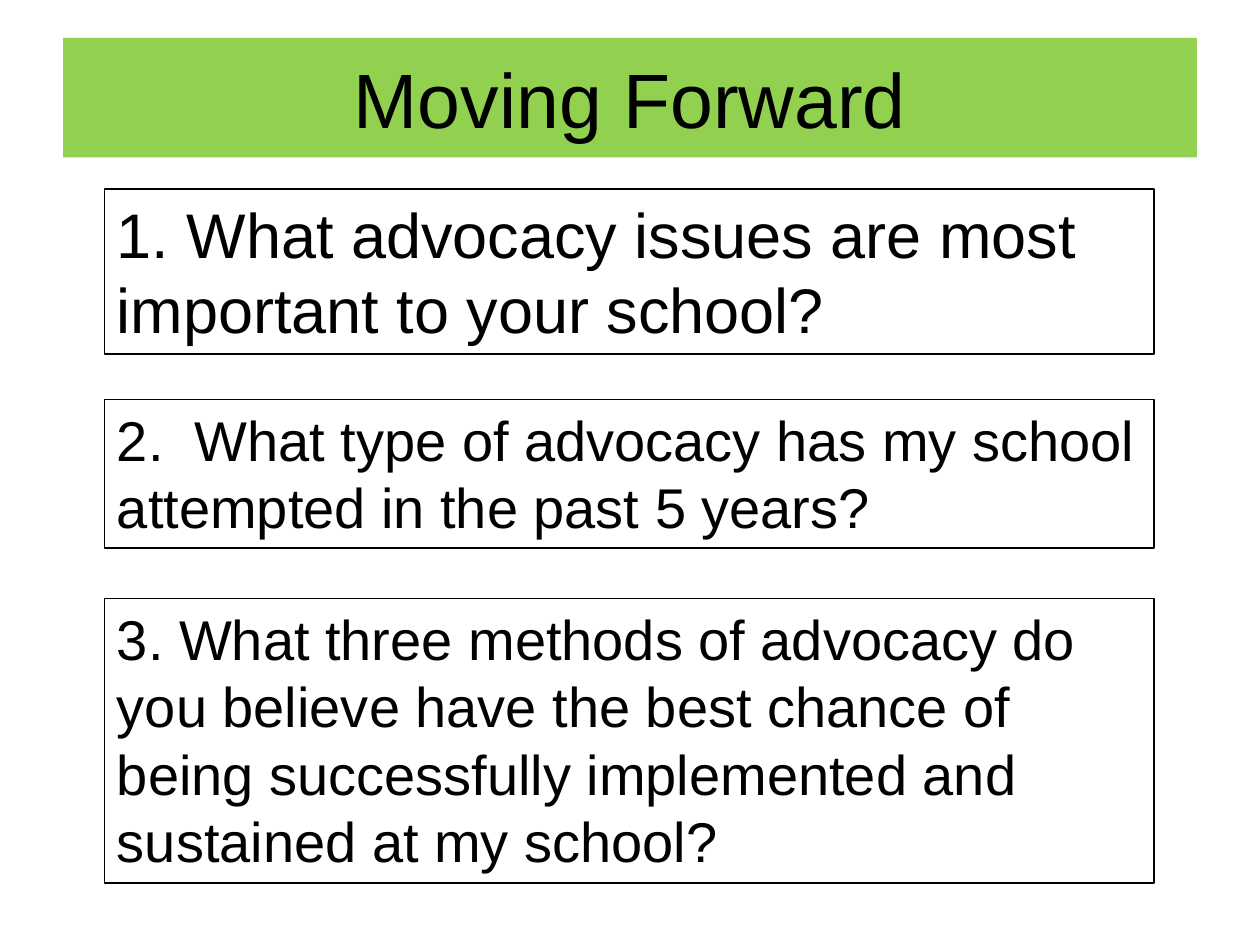
from dataclasses import dataclass

from pptx import Presentation
from pptx import util as u
from pptx.dml.color import RGBColor
from pptx.enum import text
from pptx.oxml.ns import qn
from lxml import etree

FONT = "Arial"
BLACK = "000000"
GREEN = "92D050"
BOX_LEFT, BOX_WIDTH = 0.83, 8.33


@dataclass
class Question:
    wording: str
    top: float
    height: float
    size: int


QUESTIONS = [
    Question("1. What advocacy issues are most important to your school?", 1.5, 1.31, 36),
    Question("2.  What type of advocacy has my school attempted in the past 5 years?",
             3.17, 1.18, 32),
    Question("3. What three methods of advocacy do you believe have the best chance of "
             "being successfully implemented and sustained at my school?", 4.75, 2.26, 32),
]


def color(value: str) -> RGBColor:
    return RGBColor.from_string(value)


def write(shape, wording: str, *, size: int, align=text.PP_ALIGN.LEFT,
          anchor=text.MSO_ANCHOR.TOP, fill: str = BLACK):
    frame = shape.text_frame
    frame.word_wrap = True
    frame.vertical_anchor = anchor
    paragraph = frame.paragraphs[0]
    paragraph.alignment = align
    run = paragraph.add_run()
    run.text = wording
    run.font.name = FONT
    run.font.size = u.Pt(size)
    run.font.color.rgb = color(fill)
    return paragraph


def set_space_before(paragraph, percent: int) -> None:
    """Set the space before as a share of the line height."""
    paragraph.space_before = u.Pt(0)
    spacing = paragraph._p.pPr.find(qn("a:spcBef"))
    spacing.remove(spacing[0])
    etree.SubElement(spacing, qn("a:spcPct"), val=str(percent * 1000))


def add_title(slide, wording: str) -> None:
    title = slide.shapes.title
    title.left, title.top = u.Inches(0.5), u.Inches(0.3)
    title.width, title.height = u.Inches(9), u.Inches(0.95)
    title.fill.solid()
    title.fill.fore_color.rgb = color(GREEN)
    write(title, wording, size=44, align=text.PP_ALIGN.CENTER,
          anchor=text.MSO_ANCHOR.MIDDLE)


def add_question(slide, question: Question) -> None:
    box = slide.shapes.add_textbox(u.Inches(BOX_LEFT), u.Inches(question.top),
                                   u.Inches(BOX_WIDTH), u.Inches(question.height))
    box.line.color.rgb = color(BLACK)
    box.line.width = u.Pt(0.75)
    paragraph = write(box, question.wording, size=question.size)
    set_space_before(paragraph, 50)
    box.text_frame.auto_size = text.MSO_AUTO_SIZE.SHAPE_TO_FIT_TEXT


def main() -> None:
    presentation = Presentation()
    presentation.slide_width = u.Inches(10)
    presentation.slide_height = u.Inches(7.5)
    slide = presentation.slides.add_slide(presentation.slide_layouts[5])
    add_title(slide, "Moving Forward")
    for question in QUESTIONS:
        add_question(slide, question)
    presentation.save("out.pptx")


if __name__ == "__main__":
    main()
